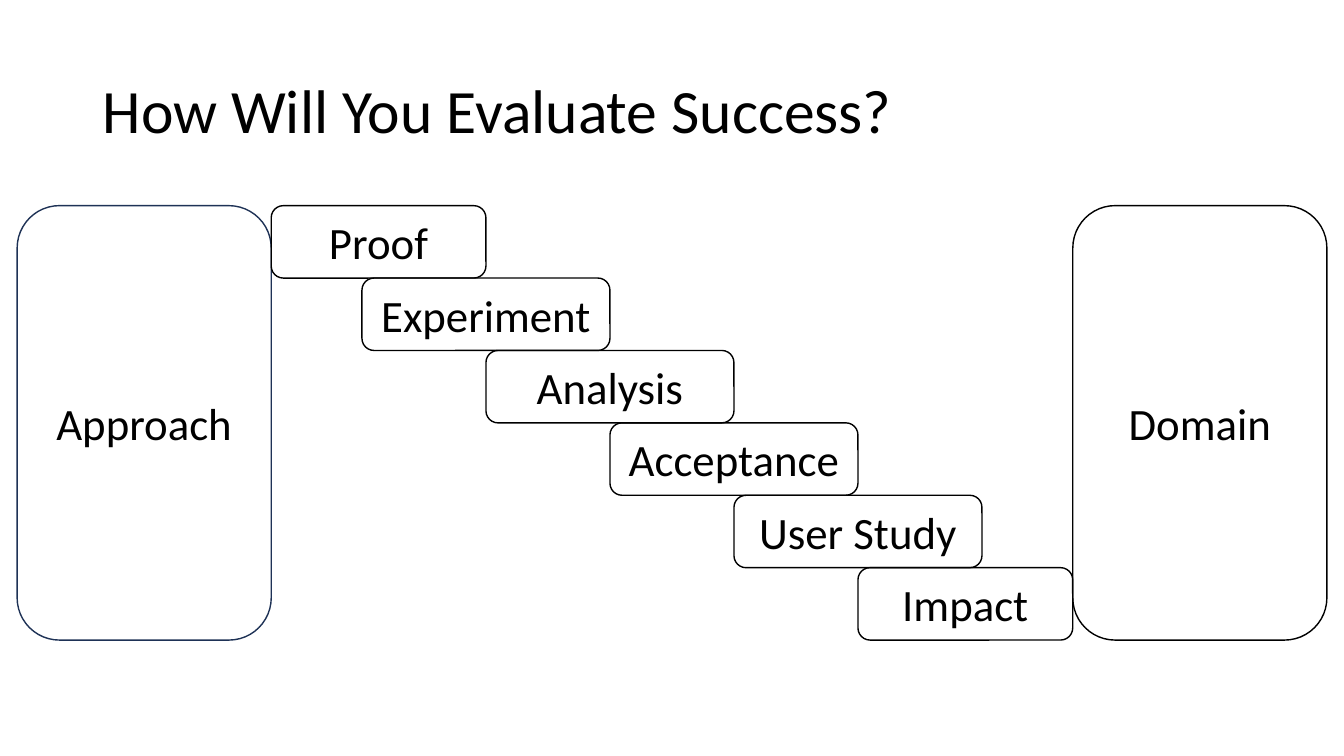
"""Build the slide that bridges an approach to its domain with evaluation steps."""
from pptx import Presentation, util as u
from pptx.dml.color import RGBColor
from pptx.enum import shapes, text

BLACK = RGBColor(0x00, 0x00, 0x00)
NAVY = RGBColor(0x1E, 0x32, 0x56)
FONT = "Calibri"

SLIDE_WIDTH, SLIDE_HEIGHT = 13.33, 7.5
MARGIN = 0.17
PANEL_TOP, PANEL_WIDTH, PANEL_HEIGHT = 2.04, 2.52, 4.31
BRIDGE_LEFT = MARGIN + PANEL_WIDTH
BRIDGE_RIGHT = SLIDE_WIDTH - BRIDGE_LEFT
STEPS = ["Proof", "Experiment", "Analysis", "Acceptance", "User Study", "Impact"]
STEP_WIDTH = 2.46
STEP_HEIGHT = PANEL_HEIGHT / len(STEPS)
STEP_SHIFT = STEP_WIDTH / 2
STAIR_WIDTH = STEP_WIDTH + STEP_SHIFT * (len(STEPS) - 1)
STAIR_LEFT = (SLIDE_WIDTH - STAIR_WIDTH) / 2


def write(frame, wording, size, align):
    """Put one vertically centred run of text into a frame."""
    frame.word_wrap = True
    frame.vertical_anchor = text.MSO_ANCHOR.MIDDLE
    paragraph = frame.paragraphs[0]
    paragraph.alignment = align
    run = paragraph.add_run()
    run.text = wording
    run.font.size = u.Pt(size)
    run.font.name = FONT
    run.font.color.rgb = BLACK
    return paragraph


def add_title(slide, wording):
    """Add the slide heading."""
    heading = slide.shapes.add_textbox(
        u.Inches(0.92), u.Inches(0.4), u.Inches(11.5), u.Inches(1.45))
    write(heading.text_frame, wording, 44, text.PP_ALIGN.LEFT).line_spacing = 0.9


def add_box(slide, wording, left, top, width, height, outline=BLACK):
    """Add an outlined rounded box with a centred label."""
    box = slide.shapes.add_shape(
        shapes.MSO_SHAPE.ROUNDED_RECTANGLE,
        u.Inches(left), u.Inches(top), u.Inches(width), u.Inches(height))
    box.shadow.inherit = False
    box.fill.background()
    box.line.color.rgb = outline
    box.line.width = u.Pt(1)
    write(box.text_frame, wording, 32, text.PP_ALIGN.CENTER)


def add_step(slide, index, wording):
    """Add one stair step, trimmed to the space between the panels."""
    start = STAIR_LEFT + index * STEP_SHIFT
    left = max(start, BRIDGE_LEFT)
    right = min(start + STEP_WIDTH, BRIDGE_RIGHT)
    add_box(slide, wording, left, PANEL_TOP + index * STEP_HEIGHT,
            right - left, STEP_HEIGHT)


def main():
    """Compose and save the slide."""
    deck = Presentation()
    deck.slide_width = u.Inches(SLIDE_WIDTH)
    deck.slide_height = u.Inches(SLIDE_HEIGHT)
    slide = deck.slides.add_slide(deck.slide_layouts[6])
    add_title(slide, "How Will You Evaluate Success?")
    add_box(slide, "Approach", MARGIN, PANEL_TOP, PANEL_WIDTH, PANEL_HEIGHT, NAVY)
    add_box(slide, "Domain", BRIDGE_RIGHT, PANEL_TOP, PANEL_WIDTH, PANEL_HEIGHT)
    for index, step in enumerate(STEPS):
        add_step(slide, index, step)
    deck.save("out.pptx")


if __name__ == "__main__":
    main()
